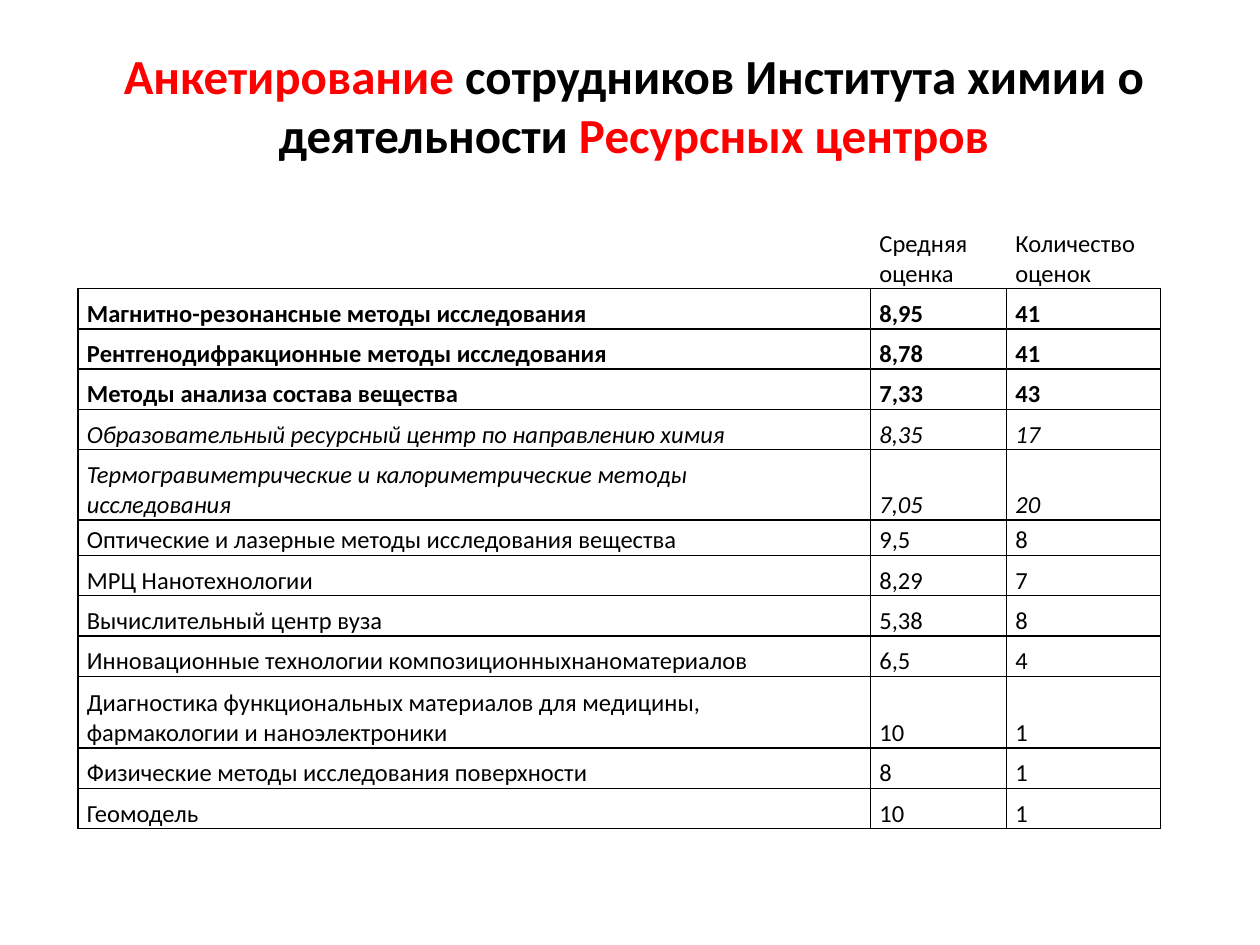
from lxml.etree import SubElement as Sub
from pptx import Presentation
from pptx.dml.color import RGBColor as RGB
from pptx.enum.text import MSO_ANCHOR as Anchor, PP_ALIGN as Align
from pptx.oxml.ns import qn
from pptx.util import Inches, Pt

INK = {"black": "000000", "red": "FF0000", "white": "FFFFFF"}
FONT = "Calibri"
COLS = [6.29, 1.08, 1.22]
TALL, MID, LOW = 0.57, 0.32, 0.28

# style, row height, cells
ROWS = [
    ("head", TALL, ["", "Средняя оценка", "Количество оценок"]),
    ("bold", MID, ["Магнитно-резонансные методы исследования", "8,95", "41"]),
    ("bold", MID, ["Рентгенодифракционные методы исследования", "8,78", "41"]),
    ("bold", MID, ["Методы анализа состава вещества", "7,33", "43"]),
    ("italic", MID, ["Образовательный ресурсный центр по направлению химия", "8,35", "17"]),
    ("italic", 0.56, ["Термогравиметрические и калориметрические методы\nисследования", "7,05", "20"]),
    ("plain", LOW, ["Оптические и лазерные методы исследования вещества", "9,5", "8"]),
    ("plain", MID, ["МРЦ Нанотехнологии", "8,29", "7"]),
    ("plain", MID, ["Вычислительный центр вуза", "5,38", "8"]),
    ("plain", MID, ["Инновационные технологии композиционныхнаноматериалов", "6,5", "4"]),
    ("plain", TALL, ["Диагностика функциональных материалов для медицины,\nфармакологии и наноэлектроники", "10", "1"]),
    ("plain", MID, ["Физические методы исследования поверхности", "8", "1"]),
    ("plain", MID, ["Геомодель", "10", "1"]),
]


def add_run(para, text, size, color="black", bold=False, italic=False):
    run = para.add_run()
    run.text = text
    font = run.font
    font.name, font.size = FONT, Pt(size)
    font.bold, font.italic = bold, italic
    font.color.rgb = RGB.from_string(INK[color])


def set_edges(cell, shown):
    """Draw the sides named in shown (L, R, T, B) and clear the others."""
    props = cell._tc.get_or_add_tcPr()
    for side in "LRTB":
        line = Sub(props, qn(f"a:ln{side}"), w=str(Pt(1)))
        if side in shown:
            fill = Sub(line, qn("a:solidFill"))
            Sub(fill, qn("a:srgbClr"), val=INK["black"])
        else:
            Sub(line, qn("a:noFill"))


deck = Presentation()
deck.slide_width, deck.slide_height = Inches(10), Inches(7.5)
slide = deck.slides.add_slide(deck.slide_layouts[6])

# Title
box = slide.shapes.add_textbox(Inches(0.78), Inches(0.31), Inches(8.5), Inches(1.04))
frame = box.text_frame
frame.word_wrap = True
frame.vertical_anchor = Anchor.MIDDLE
para = frame.paragraphs[0]
para.alignment = Align.CENTER
for text, color in [
    ("Анкетирование ", "red"),
    ("сотрудников Института химии о деятельности ", "black"),
    ("Ресурсных центров", "red"),
]:
    add_run(para, text, 28, color, bold=True)

# Survey table
high = sum(row[1] for row in ROWS)
grid = slide.shapes.add_table(
    len(ROWS), len(COLS), Inches(0.62), Inches(1.72), Inches(sum(COLS)), Inches(high)
).table
grid.first_row = grid.horz_banding = False
for col, wide in zip(grid.columns, COLS):
    col.width = Inches(wide)

for r, (style, tall, texts) in enumerate(ROWS):
    grid.rows[r].height = Inches(tall)
    for c, text in enumerate(texts):
        cell = grid.cell(r, c)
        cell.margin_left = cell.margin_right = Inches(0.07)
        cell.margin_top = cell.margin_bottom = 0
        cell.vertical_anchor = Anchor.BOTTOM
        set_edges(cell, "B" if style == "head" else "LRTB")
        cell.fill.solid()
        cell.fill.fore_color.rgb = RGB.from_string(INK["white"])
        if not text:
            continue
        for n, line in enumerate(text.split("\n")):
            frame = cell.text_frame
            para = frame.add_paragraph() if n else frame.paragraphs[0]
            add_run(para, line, 14, bold=style == "bold", italic=style == "italic")

deck.save("out.pptx")
